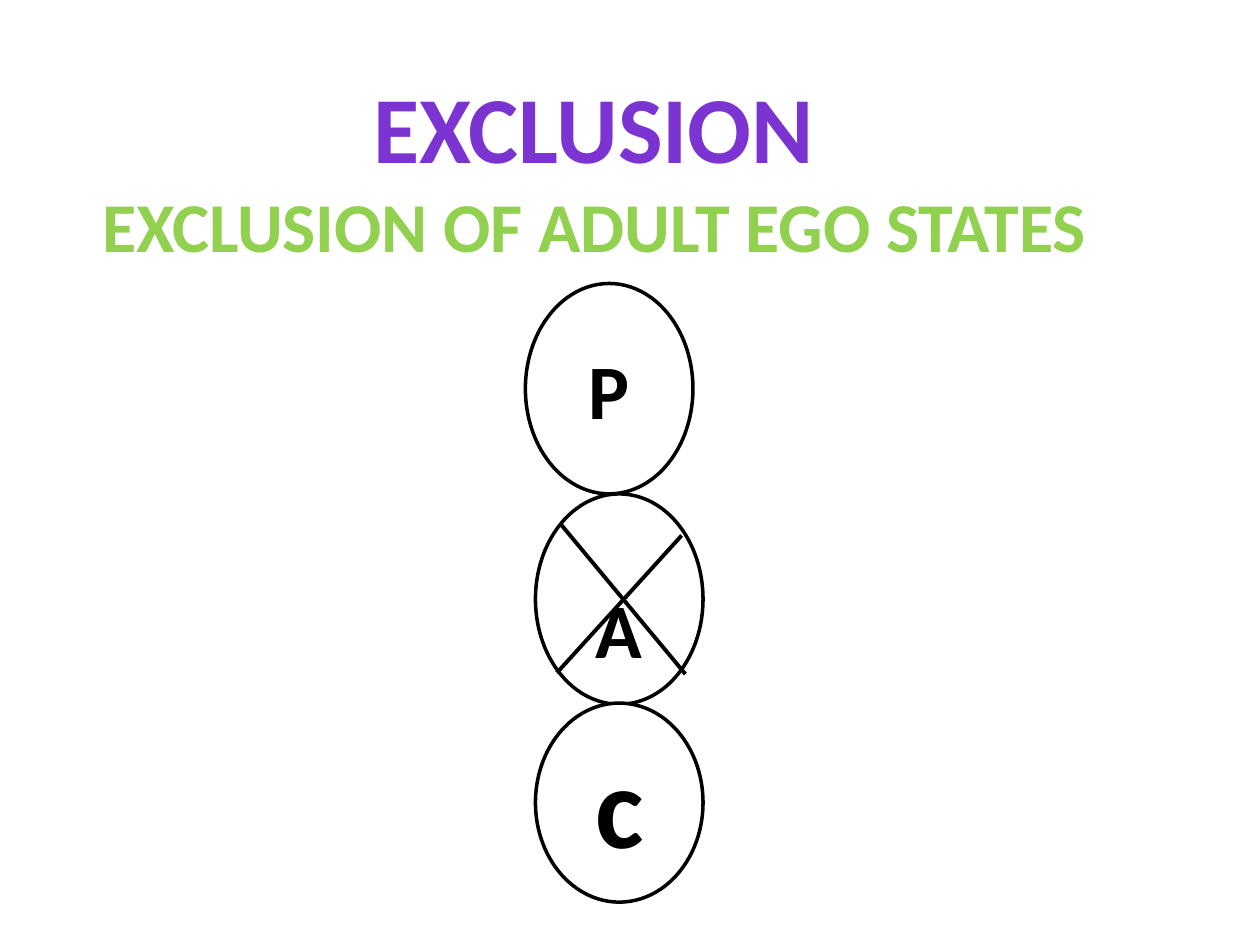
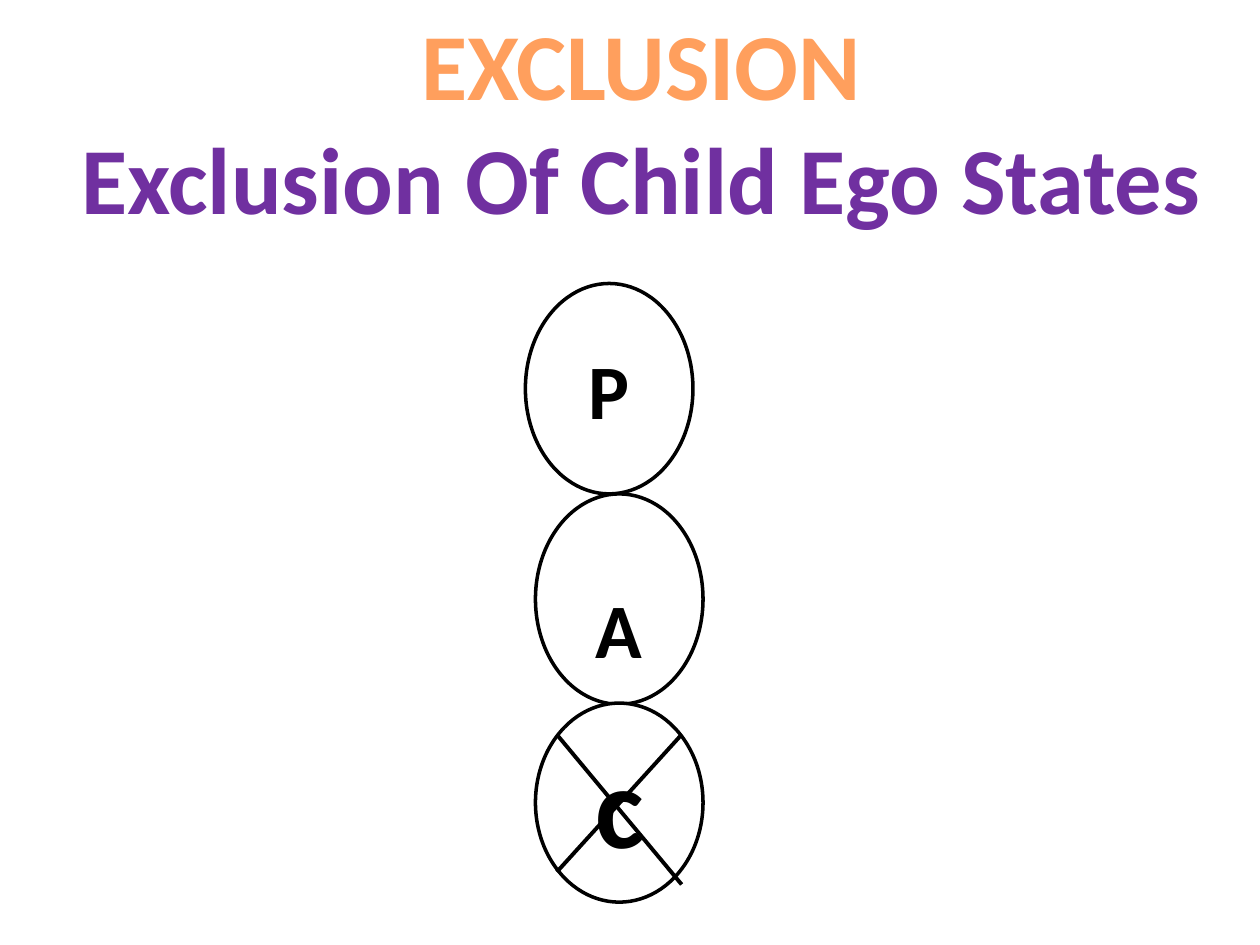
from lxml.etree import SubElement
from pptx import Presentation
from pptx.dml.color import RGBColor
from pptx.enum.shapes import MSO_CONNECTOR as Connector, MSO_SHAPE as Shape
from pptx.enum.text import MSO_ANCHOR as Anchor, MSO_AUTO_SIZE as AutoSize, PP_ALIGN as Align
from pptx.oxml.ns import qn
from pptx.util import Emu, Pt

EMU_PER_PX = 9144  # 100 px to the inch
TITLE_ONLY = 5

# letter, box, letter size, anchor
EGO_STATES = [
    ("A", (425, 392, 133, 167), 44, Anchor.BOTTOM),
    ("P", (417, 225, 133, 167), 44, Anchor.MIDDLE),
    ("c", (425, 558, 133, 158), 66, Anchor.MIDDLE),
]


def px(length):
    return Emu(length * EMU_PER_PX)


def color(hex_string):
    return RGBColor.from_string(hex_string)


class Deck:
    font = "Calibri"
    ink = "000000"
    paper = "FFFFFF"

    def __init__(self):
        self.presentation = Presentation()
        self.presentation.slide_width = px(1000)
        self.presentation.slide_height = px(750)
        self.slide = None

    def add_slide(self):
        layout = self.presentation.slide_layouts[TITLE_ONLY]
        self.slide = self.presentation.slides.add_slide(layout)

    def style(self, paragraph, size, hex_string):
        paragraph.alignment = Align.CENTER
        for run in paragraph.runs:
            run.font.name = self.font
            run.font.size = Pt(size)
            run.font.bold = True
            run.font.color.rgb = color(hex_string)

    def title(self, box, lines):
        """Fill the title placeholder with (text, size, colour) lines."""
        title = self.slide.shapes.title
        title.left, title.top, title.width, title.height = map(px, box)
        frame = title.text_frame
        frame.word_wrap = False
        frame.auto_size = AutoSize.NONE
        frame.vertical_anchor = Anchor.TOP
        frame.text = "\n".join(text for text, _, _ in lines)
        for paragraph, (_, size, hex_string) in zip(frame.paragraphs, lines):
            self.style(paragraph, size, hex_string)

    def ego_state(self, letter, box, size, anchor):
        oval = self.slide.shapes.add_shape(Shape.OVAL, *map(px, box))
        oval.shadow.inherit = False
        oval.fill.solid()
        oval.fill.fore_color.rgb = color(self.paper)
        oval.line.color.rgb = color(self.ink)
        oval.line.width = Pt(2)
        frame = oval.text_frame
        frame.vertical_anchor = anchor
        if anchor == Anchor.BOTTOM:
            frame.margin_bottom = 0
        frame.text = letter
        self.style(frame.paragraphs[0], size, self.ink)

    def stroke(self, ends):
        line = self.slide.shapes.add_connector(Connector.STRAIGHT, *map(px, ends))
        line.line.color.rgb = color(self.ink)
        line.line.width = Pt(2.25)
        SubElement(line._element.spPr, qn("a:effectLst"))

    def exclusion_slide(self, title_box, title_lines, cross):
        """Draw the three ego states and cross out the excluded one."""
        self.add_slide()
        self.title(title_box, title_lines)
        for ego_state in EGO_STATES:
            self.ego_state(*ego_state)
        for ends in cross:
            self.stroke(ends)


def main():
    deck = Deck()
    deck.exclusion_slide(
        (67, 50, 809, 168),
        [("EXCLUSION", 54, "7B34D2"), ("EXCLUSION OF ADULT EGO STATES", 40, "92D050")],
        [(445, 416, 544, 535), (442, 534, 541, 425)],
    )
    deck.exclusion_slide(
        (50, 0, 918, 192),
        [("EXCLUSION", 54, "FF9F5D"), ("Exclusion Of Child Ego States", 54, "7030A0")],
        [(442, 583, 541, 702), (442, 692, 541, 583)],
    )
    deck.presentation.save("out.pptx")


if __name__ == "__main__":
    main()
